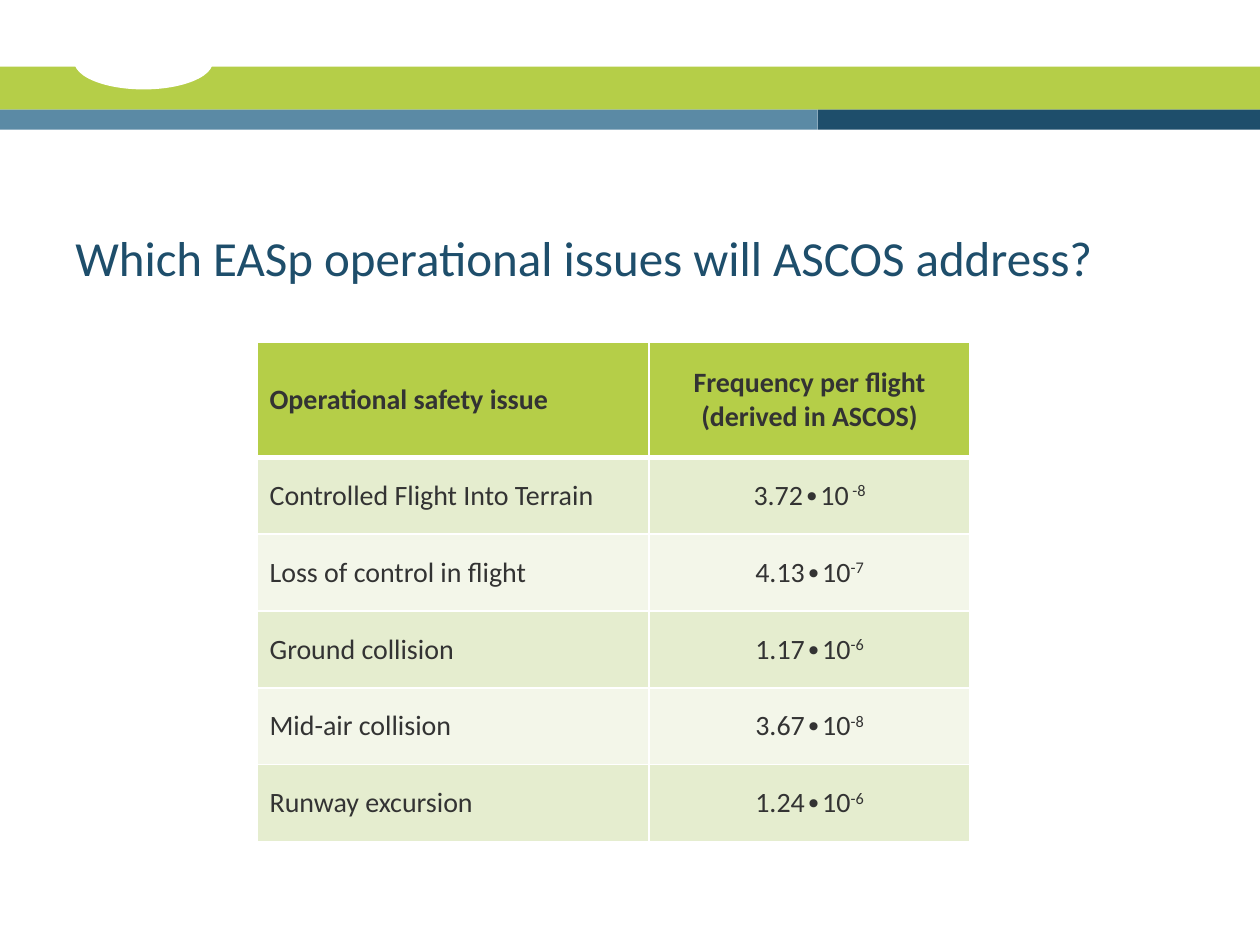
"""Build the slide on operational safety issues and their frequencies."""
from lxml import etree
from pptx import Presentation
from pptx.dml.color import RGBColor
from pptx.enum import shapes, text
from pptx.oxml import ns
from pptx.util import Inches, Pt

GREEN, NAVY, BLUE, WHITE, GREY = "B5CE48", "1E4E6B", "5B8AA5", "FFFFFF", "333333"
BAND_FILLS = ["E5EDCF", "F3F6E9"]


def paint(target, color):
    target.solid()
    target.fore_color.rgb = RGBColor.from_string(color)


def add_border(cell, side, width):
    line = etree.SubElement(cell._tc.get_or_add_tcPr(), ns.qn(f"a:{side}"), w=str(Pt(width)))
    fill = etree.SubElement(line, ns.qn("a:solidFill"))
    etree.SubElement(fill, ns.qn("a:srgbClr"), val=WHITE)


presentation = Presentation()
presentation.slide_width, presentation.slide_height = Inches(10), Inches(7.5)
slide = presentation.slides.add_slide(presentation.slide_layouts[6])

RECTANGLE, OVAL = shapes.MSO_SHAPE.RECTANGLE, shapes.MSO_SHAPE.OVAL
for kind, color, *box in [
    (RECTANGLE, GREEN, 0, 0.53, 10, 0.34),
    (RECTANGLE, NAVY, 6.49, 0.87, 3.51, 0.16),
    (RECTANGLE, BLUE, 0, 0.87, 6.49, 0.16),
    (OVAL, WHITE, 0.59, 0.27, 1.1, 0.44),
]:
    shape = slide.shapes.add_shape(kind, *map(Inches, box))
    shape.shadow.inherit = False
    paint(shape.fill, color)
    shape.line.fill.background()

title = slide.shapes.add_textbox(Inches(0.5), Inches(1.15), Inches(9), Inches(1.17))
title.text_frame.word_wrap = True
title.text_frame.vertical_anchor = text.MSO_ANCHOR.BOTTOM
paragraph = title.text_frame.paragraphs[0]
paragraph.text = "Which EASp operational issues will ASCOS address?"
paragraph.font.name, paragraph.font.size = "Calibri", Pt(28)
paragraph.font.color.rgb = RGBColor.from_string(NAVY)

rows = [
    ("Operational safety issue", "Frequency per flight (derived in ASCOS)", ""),
    ("Controlled Flight Into Terrain", "3.72∙10", " -8"),
    ("Loss of control in flight", "4.13∙10", "-7"),
    ("Ground collision", "1.17∙10", "-6"),
    ("Mid-air collision", "3.67∙10", "-8"),
    ("Runway excursion", "1.24∙10", "-6"),
]
table = slide.shapes.add_table(
    len(rows), 2, Inches(2.04), Inches(2.72), Inches(5.66), Inches(3.95)
).table
table.columns[0].width, table.columns[1].width = Inches(3.11), Inches(2.55)

for row_index, (issue, frequency, exponent) in enumerate(rows):
    is_header = row_index == 0
    table.rows[row_index].height = Inches(0.91 if is_header else 0.61)
    for column_index, content in enumerate([issue, frequency]):
        cell = table.cell(row_index, column_index)
        cell.vertical_anchor = text.MSO_ANCHOR.MIDDLE
        add_border(cell, "lnL", 1)
        add_border(cell, "lnR", 1)
        add_border(cell, "lnT", 3 if row_index == 1 else 1)
        add_border(cell, "lnB", 3 if is_header else 1)
        paint(cell.fill, GREEN if is_header else BAND_FILLS[(row_index - 1) % 2])

        paragraph = cell.text_frame.paragraphs[0]
        paragraph.add_run().text = content
        if column_index == 1:
            paragraph.alignment = text.PP_ALIGN.CENTER
            if exponent:
                superscript = paragraph.add_run()
                superscript.text = exponent
                superscript.font._element.set("baseline", "30000")
        if is_header:
            paragraph.space_after = Pt(6)
        paragraph.font.name, paragraph.font.size = "Calibri", Pt(16)
        paragraph.font.bold = is_header
        paragraph.font.color.rgb = RGBColor.from_string(GREY)

presentation.save("out.pptx")
